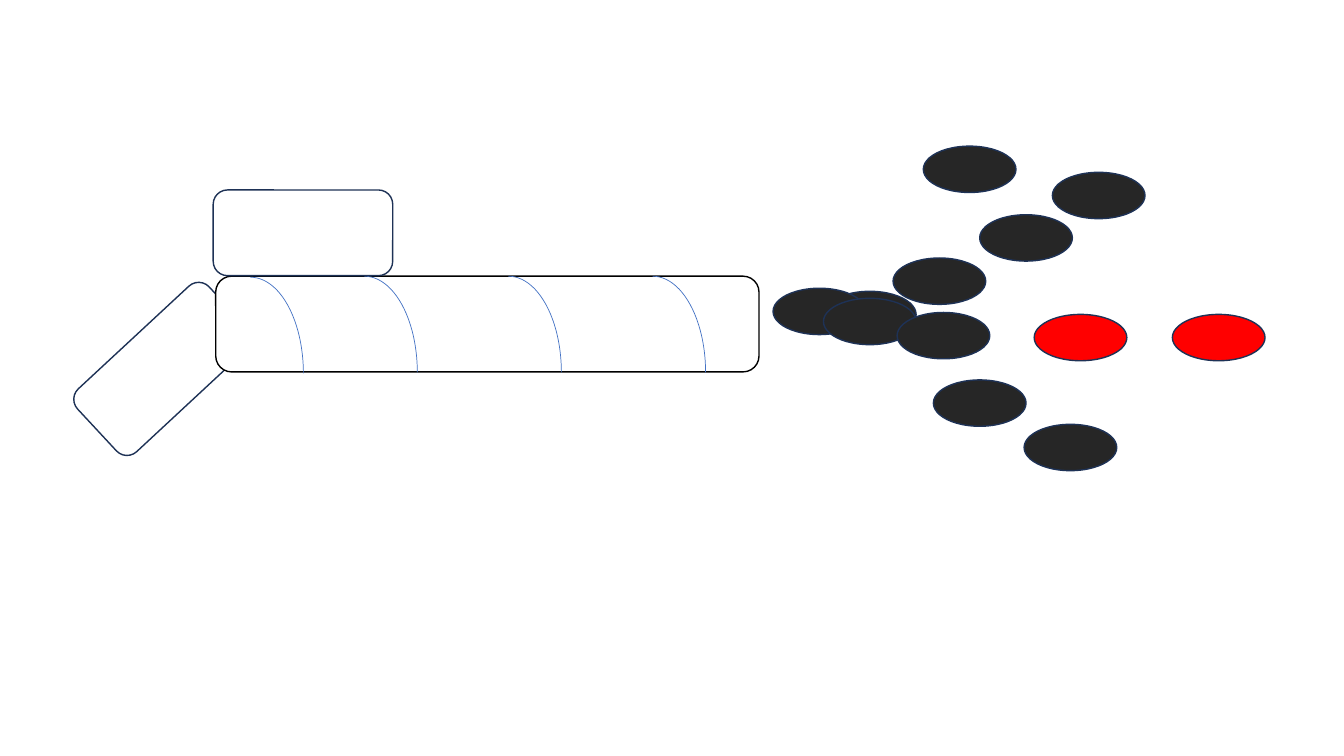
from pptx import Presentation
from pptx.dml.color import RGBColor
from pptx.enum.shapes import MSO_SHAPE as SHAPE
from pptx.util import Pt

COLORS = {
    "pellet": "262626",
    "hot": "FF0000",
    "navy": "1E3256",
    "black": "000000",
    "white": "FFFFFF",
    "blue": "4472C4",
}

PELLET_SIZE = (66.2, 33.1)
PELLETS = [
    (588.2, 208.1, "pellet"),
    (637.9, 184.3, "pellet"),
    (738.7, 224.6, "hot"),
    (552.2, 205.9, "pellet"),
    (588.2, 213.1, "pellet"),
    (699.8, 153.4, "pellet"),
    (751.7, 123.1, "pellet"),
    (640.8, 223.2, "pellet"),
    (666.7, 271.4, "pellet"),
    (731.5, 303.1, "pellet"),
    (837.4, 224.6, "hot"),
    (659.5, 104.4, "pellet"),
]

BLOCK_SIZE = (61.2, 128.2)
BARREL_SIZE = (68.4, 388.1)
RING_SIZE = (75.6, 137.5)
RINGS = [(325.4, 197.3), (222.5, 197.3), (428.4, 197.3), (141.1, 198)]


def add_part(group, kind, left, top, size, fill=None, line="navy",
             weight=1, rotation=0):
    sp = group.shapes.add_shape(kind, Pt(left), Pt(top), *map(Pt, size))
    sp.shadow.inherit = False
    sp.rotation = rotation
    if fill:
        sp.fill.solid()
        sp.fill.fore_color.rgb = RGBColor.from_string(COLORS[fill])
    else:
        sp.fill.background()
    sp.line.color.rgb = RGBColor.from_string(COLORS[line])
    sp.line.width = Pt(weight)


def add_pellets(s):
    group = s.shapes.add_group_shape()
    for left, top, fill in PELLETS:
        add_part(group, SHAPE.OVAL, left, top, PELLET_SIZE, fill)


def add_launcher(s):
    group = s.shapes.add_group_shape()
    block = SHAPE.ROUNDED_RECTANGLE
    add_part(group, block, 85.7, 199.4, BLOCK_SIZE, "white", rotation=47.1)
    add_part(group, block, 313.9, 37.4, BARREL_SIZE, "white", "black", rotation=90)
    for left, top in RINGS:
        add_part(group, SHAPE.ARC, left, top, RING_SIZE, line="blue", weight=0.5)
    add_part(group, block, 185.8, 102.2, BLOCK_SIZE, "white", rotation=90)


def main():
    prs = Presentation()
    prs.slide_width, prs.slide_height = Pt(960), Pt(540)
    s = prs.slides.add_slide(prs.slide_layouts[6])
    add_pellets(s)
    add_launcher(s)
    prs.save("out.pptx")


if __name__ == "__main__":
    main()
